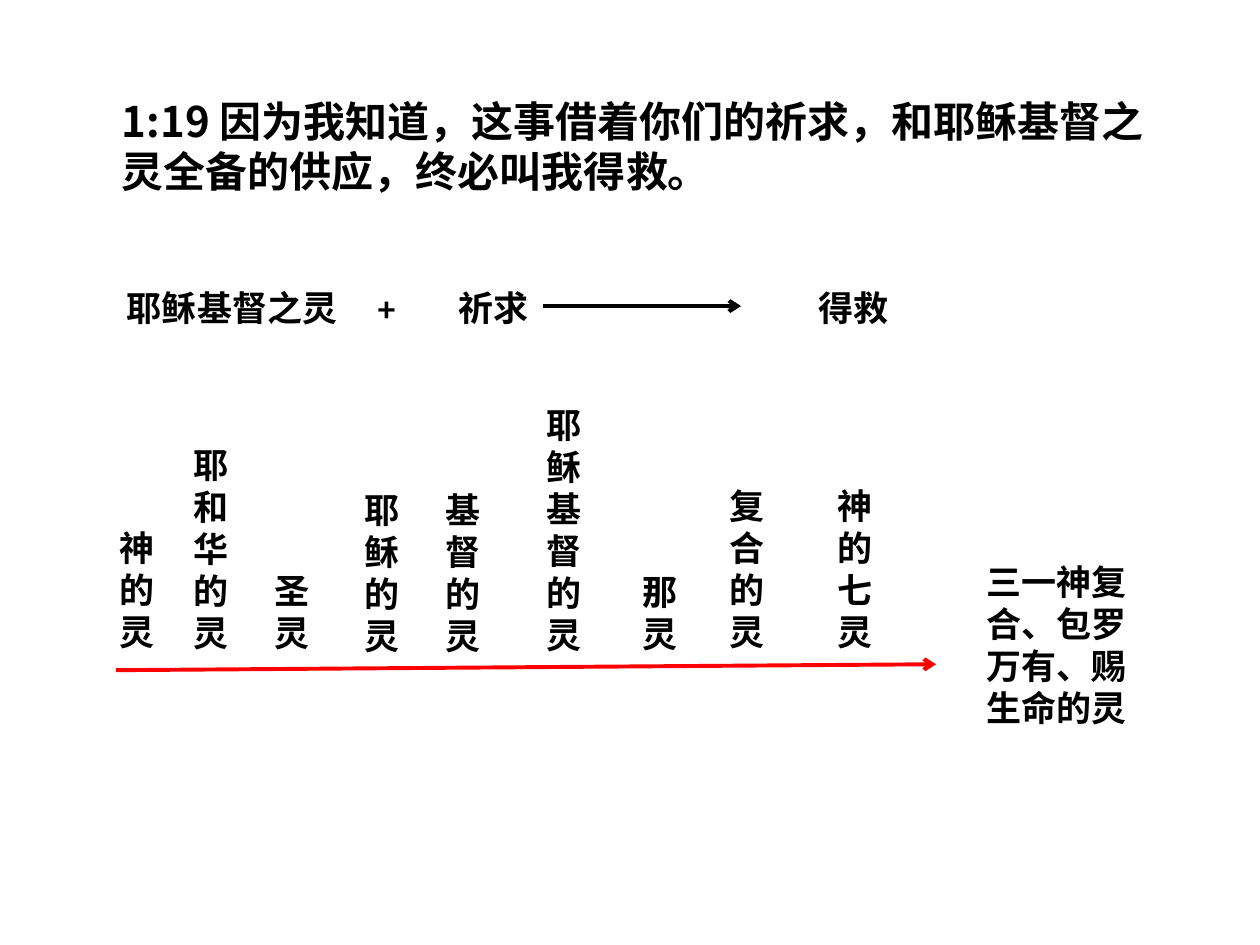
import dataclasses

import pptx
import pptx.dml.color
import pptx.enum.shapes
import pptx.enum.text
import pptx.oxml
import pptx.oxml.ns
import pptx.util

Cm = pptx.util.Cm
Color = pptx.dml.color.RGBColor


@dataclasses.dataclass(frozen=True)
class Theme:
    text: Color = Color(0, 0, 0)
    timeline: Color = Color(255, 0, 0)
    verse_font: str = "Noto Sans CJK SC"
    body_font: str = "Calibri"
    verse_size: int = 24
    body_size: int = 20
    line_width: float = 2.25


@dataclasses.dataclass(frozen=True)
class Label:
    """A text and its place in centimetres."""
    text: str
    left: float
    top: float
    width: float
    lines: int = 1


THEME = Theme()
LINE_HEIGHT = 0.86
PADDING = 0.25
FORMULA_TOP = 5.66
ARROW_Y = 6.17

VERSE = "1:19 因为我知道，这事借着你们的祈求，和耶稣基督之灵全备的供应，终必叫我得救。"
FORMULA = [
    Label("耶稣基督之灵", 2.31, FORMULA_TOP, 4.78),
    Label("+", 7.44, FORMULA_TOP, 0.43),
    Label("祈求", 8.99, FORMULA_TOP, 1.93),
    Label("得救", 16.26, FORMULA_TOP, 1.93),
]
# One character per line, so each column is as tall as its text is long.
SPIRIT_COLUMNS = [
    Label(text, left, top, width, len(text))
    for text, left, top, width in [
        ("神的灵", 2.16, 10.49, 0.86),
        ("耶和华的灵", 3.66, 8.81, 1.02),
        ("圣灵", 5.28, 11.35, 1.22),
        ("耶稣的灵", 7.09, 9.73, 1.22),
        ("基督的灵", 8.74, 9.73, 1.24),
        ("耶稣基督的灵", 10.77, 8.0, 1.4),
        ("那灵", 12.7, 11.38, 1.04),
        ("复合的灵", 14.45, 9.65, 1.14),
        ("神的七灵", 16.64, 9.65, 1.52),
    ]
]
CONCLUSION = Label("三一神复合、包罗万有、赐生命的灵", 19.63, 11.18, 3.56, 4)


def add_text(page, text: str, *, left: float, top: float, width: float, height: float,
             size: int = THEME.body_size, font: str = THEME.body_font, wrap: bool = True) -> None:
    box = page.shapes.add_textbox(Cm(left), Cm(top), Cm(width), Cm(height))
    frame = box.text_frame
    frame.word_wrap = wrap
    frame.auto_size = pptx.enum.text.MSO_AUTO_SIZE.SHAPE_TO_FIT_TEXT
    span = frame.paragraphs[0].add_run()
    span.text = text
    span.font.name = font
    span.font.size = pptx.util.Pt(size)
    span.font.bold = True
    span.font.color.rgb = THEME.text


def add_label(page, label: Label, *, wrap: bool = True) -> None:
    add_text(page, label.text, left=label.left, top=label.top, width=label.width,
             height=PADDING + LINE_HEIGHT * label.lines, wrap=wrap)


def add_arrow(page, start: tuple[float, float], end: tuple[float, float], color: Color) -> None:
    arrow = page.shapes.add_connector(
        pptx.enum.shapes.MSO_CONNECTOR.STRAIGHT, *map(Cm, start + end))
    arrow.line.color.rgb = color
    arrow.line.width = pptx.util.Pt(THEME.line_width)
    head = pptx.oxml.parse_xml(f'<a:tailEnd {pptx.oxml.ns.nsdecls("a")} type="arrow"/>')
    arrow.line._get_or_add_ln().append(head)
    no_effects = pptx.oxml.parse_xml(f'<a:effectLst {pptx.oxml.ns.nsdecls("a")}/>')
    arrow._element.spPr.append(no_effects)


def main() -> None:
    deck = pptx.Presentation()
    deck.slide_width, deck.slide_height = Cm(25.4), Cm(19.05)
    page = deck.slides.add_slide(deck.slide_layouts[6])

    add_text(page, VERSE, left=2.21, top=1.8, width=21.34, height=2.31,
             size=THEME.verse_size, font=THEME.verse_font)
    for term in FORMULA:
        add_label(page, term, wrap=term.text == "+")
    add_arrow(page, (10.95, ARROW_Y), (14.94, ARROW_Y), THEME.text)

    for column in SPIRIT_COLUMNS:
        add_label(page, column)
    add_arrow(page, (2.34, 13.51), (18.87, 13.39), THEME.timeline)
    add_label(page, CONCLUSION)

    deck.save("out.pptx")


if __name__ == "__main__":
    main()
